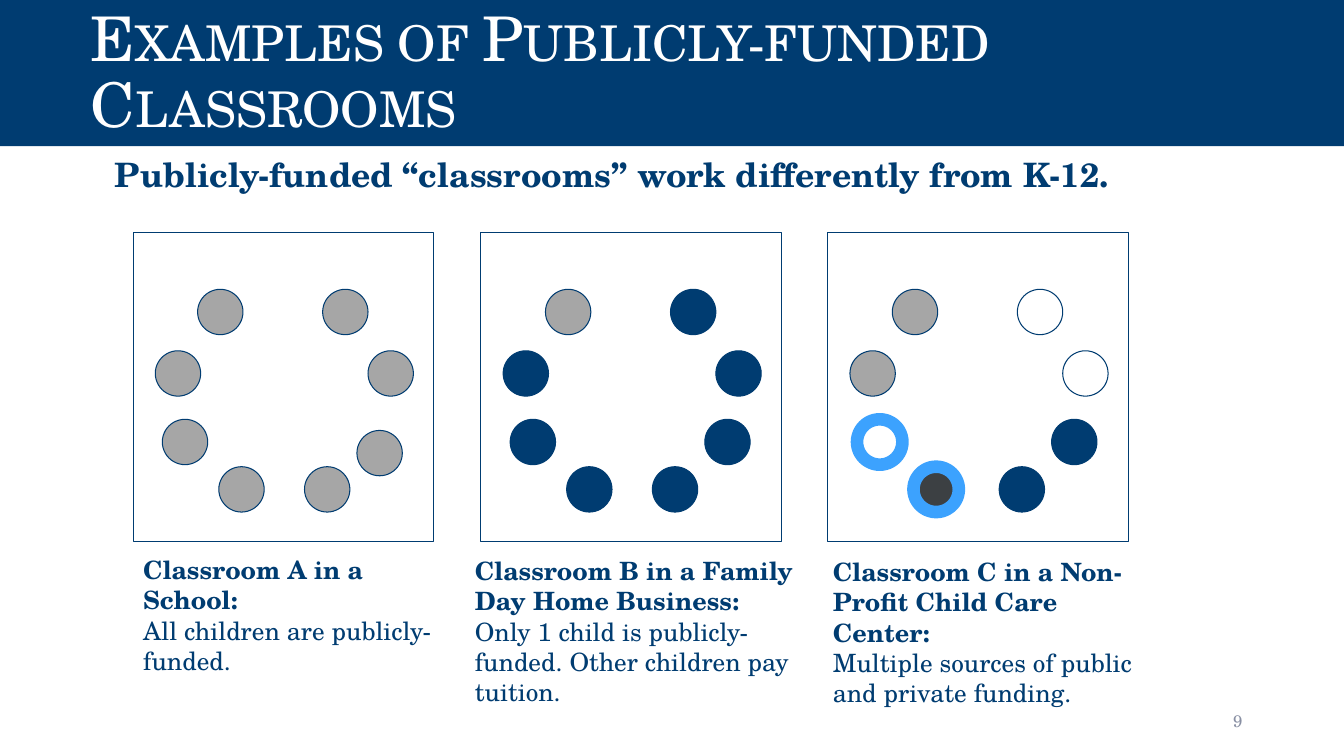
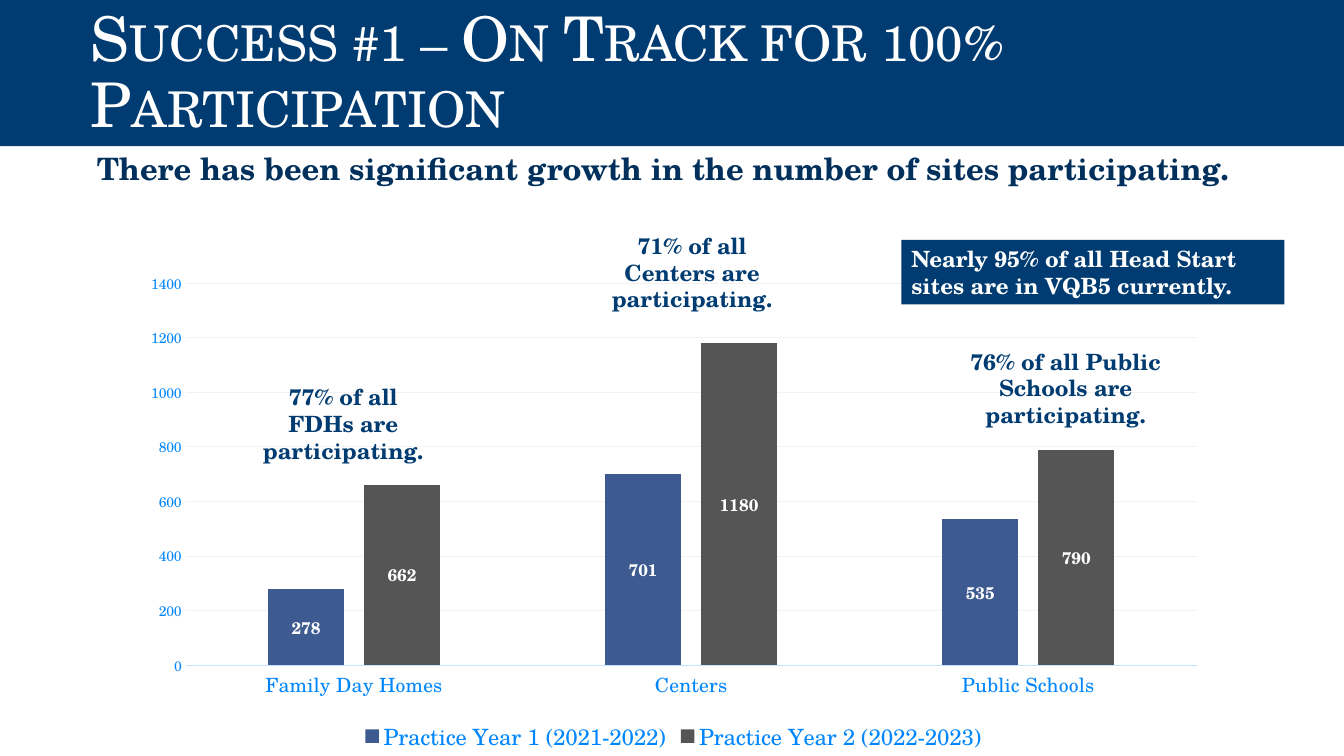
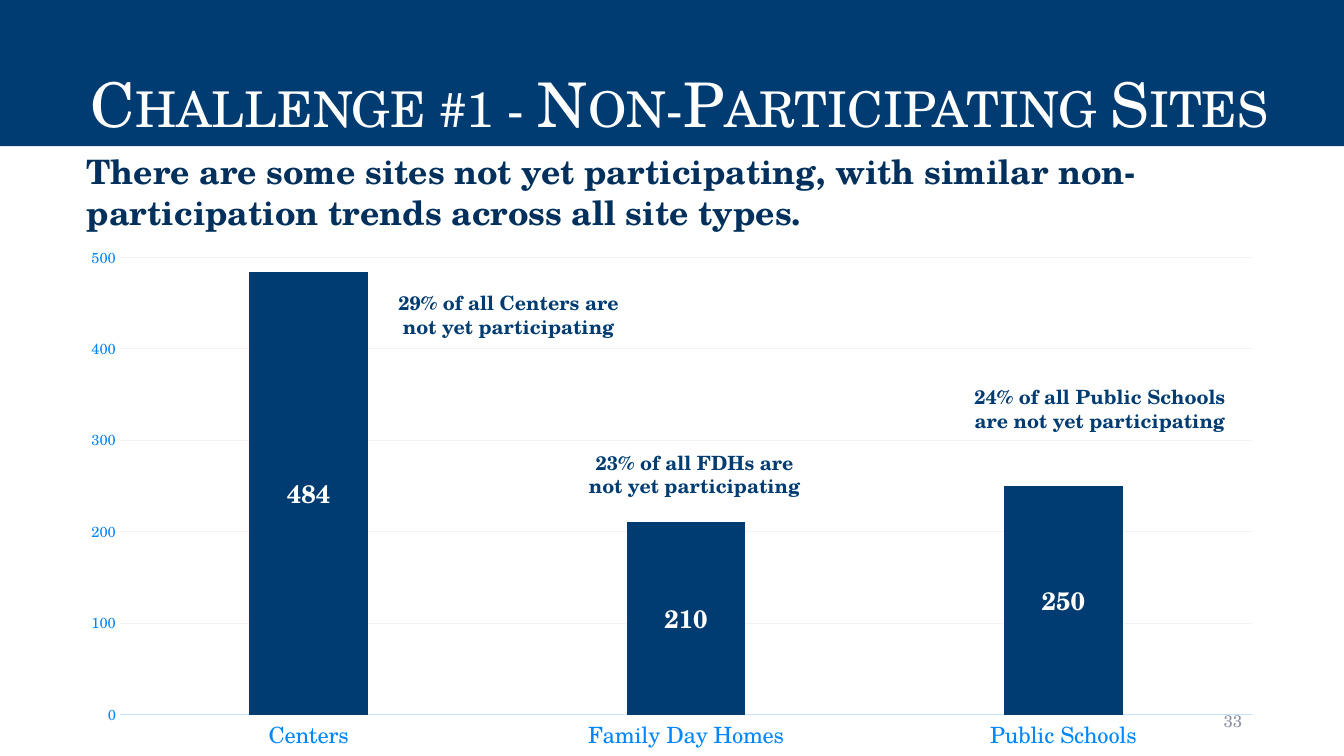
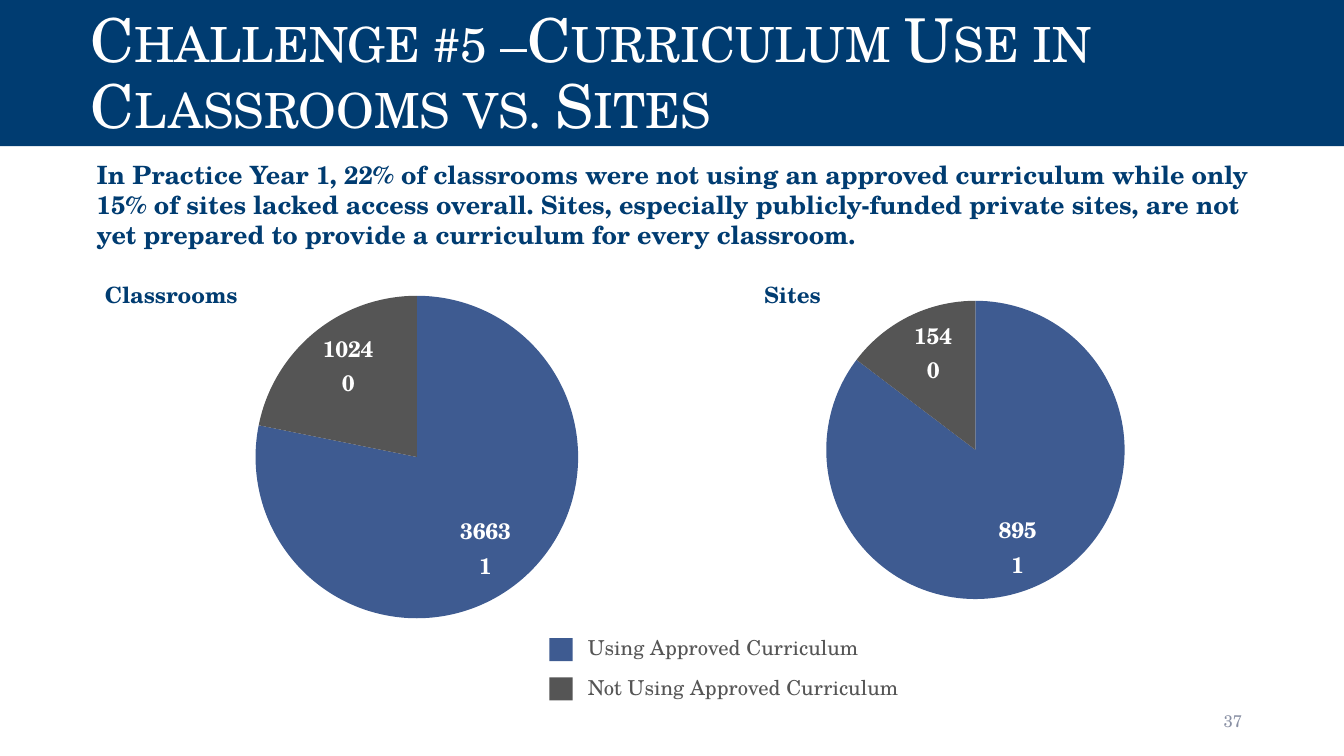
from dataclasses import dataclass

from lxml import etree
from pptx import Presentation
from pptx.chart.data import CategoryChartData
from pptx.dml.color import RGBColor
from pptx.enum.chart import XL_CHART_TYPE, XL_LABEL_POSITION, XL_LEGEND_POSITION, XL_TICK_MARK
from pptx.enum.shapes import MSO_SHAPE
from pptx.enum.text import MSO_ANCHOR, PP_ALIGN
from pptx.oxml.ns import qn
from pptx.util import Emu, Pt

RECTANGLE, OVAL = MSO_SHAPE.RECTANGLE, MSO_SHAPE.OVAL
LEFT, CENTER, RIGHT = PP_ALIGN.LEFT, PP_ALIGN.CENTER, PP_ALIGN.RIGHT
TOP, MIDDLE, BOTTOM = MSO_ANCHOR.TOP, MSO_ANCHOR.MIDDLE, MSO_ANCHOR.BOTTOM
COLUMN, PIE = XL_CHART_TYPE.COLUMN_CLUSTERED, XL_CHART_TYPE.PIE
LABEL_CENTER, LABEL_BEST_FIT = XL_LABEL_POSITION.CENTER, XL_LABEL_POSITION.BEST_FIT
LEGEND_BOTTOM = XL_LEGEND_POSITION.BOTTOM
NO_TICK = XL_TICK_MARK.NONE
EMU_PER_PX = 9144
SLIDE_WIDTH, SLIDE_HEIGHT = 1333, 750
INSETS = (10, 5, 10, 5)
WIDE_INSETS = (13, 13, 13, 13)


@dataclass(frozen=True)
class Theme:
    font: str = "TeX Gyre Schola"
    navy: str = "003C71"
    dark_navy: str = "00305B"
    white: str = "FFFFFF"
    number_gray: str = "888FA3"
    child_gray: str = "A6A6A6"
    charcoal: str = "3C4043"
    sky: str = "3CA2FE"
    series_blue: str = "3E5B91"
    series_gray: str = "555555"
    axis_text: str = "0086FC"
    axis_line: str = "C3E3FF"
    grid: str = "F2F2F2"
    title_size: float = 44
    headline_size: float = 24
    body_size: float = 18
    callout_size: float = 16
    legend_size: float = 14.7
    note_size: float = 14
    number_size: float = 12
    hairline: float = 0.75
    ring: float = 9


THEME = Theme()

PUBLIC = (THEME.child_gray, THEME.navy, THEME.hairline)
TUITION = (THEME.navy, THEME.navy, THEME.hairline)
OPEN = (THEME.white, THEME.navy, THEME.hairline)
OPEN_RING = (THEME.white, THEME.sky, THEME.ring)
DARK_RING = (THEME.charcoal, THEME.sky, THEME.ring)

SEAT_SIZE = 45
SEATS = [(64, 56), (188, 56), (233, 117), (222, 185), (170, 232), (85, 232), (29, 185), (22, 117)]
SHIFTED_SEATS = SEATS[:3] + [(222, 196)] + SEATS[4:]

CLASSROOMS = [
    (132, SHIFTED_SEATS, [PUBLIC] * 8, (129, 537, 323, 148),
     "Classroom A in a School:", "All children are publicly-funded."),
    (477, SEATS, [PUBLIC] + [TUITION] * 7, (458, 538, 342, 178),
     "Classroom B in a Family Day Home Business:",
     "Only 1 child is publicly-funded. Other children pay tuition."),
    (821, SEATS, [PUBLIC, OPEN, OPEN, TUITION, TUITION, DARK_RING, OPEN_RING, PUBLIC],
     (813, 539, 342, 178),
     "Classroom C in a Non-Profit Child Care Center:",
     "Multiple sources of public and private funding."),
]


def px(value):
    return Emu(round(value * EMU_PER_PX))


def color(value):
    return RGBColor.from_string(value)


def style_font(font, size, value, bold=False):
    font.name = THEME.font
    font.size = Pt(size)
    font.color.rgb = color(value)
    font.bold = bold


def set_line(line, value, width):
    line.color.rgb = color(value)
    line.width = Pt(width)


def fill_text(shape, paragraphs, size, value, align=LEFT, anchor=TOP, insets=INSETS, spacing=None):
    frame = shape.text_frame
    frame.word_wrap = True
    frame.vertical_anchor = anchor
    frame.margin_left, frame.margin_top, frame.margin_right, frame.margin_bottom = map(px, insets)
    for index, (text, bold) in enumerate(paragraphs):
        paragraph = frame.add_paragraph() if index else frame.paragraphs[0]
        paragraph.alignment = align
        paragraph.line_spacing = spacing
        run = paragraph.add_run()
        run.text = text
        style_font(run.font, size, value, bold)


def add_text(slide, box, paragraphs, size, value=THEME.navy, **options):
    shape = slide.shapes.add_textbox(*map(px, box))
    fill_text(shape, paragraphs, size, value, **options)


def add_block(slide, kind, box, fill, line=None, width=THEME.hairline):
    shape = slide.shapes.add_shape(kind, *map(px, box))
    shape.shadow.inherit = False
    shape.fill.solid()
    shape.fill.fore_color.rgb = color(fill)
    if line:
        set_line(shape.line, line, width)
    else:
        shape.line.fill.background()
    return shape


def add_title(slide, text, size=THEME.title_size):
    band = add_block(slide, RECTANGLE, (0, 0, SLIDE_WIDTH, 145), THEME.navy)
    fill_text(band, [(text, False)], size, THEME.white, anchor=BOTTOM,
              insets=(90, 5, 10, 5), spacing=0.9)
    for run in band.text_frame.paragraphs[0].runs:
        run.font._element.set("cap", "small")


def add_headline(slide, box, text, size=THEME.headline_size, value=THEME.navy, indent=20, spacing=None):
    add_text(slide, box, [(text, True)], size, value,
             insets=(10 + indent, 5, 10, 5), spacing=spacing)


def add_callout(slide, box, text, size=THEME.callout_size):
    add_text(slide, box, [(text, True)], size, align=CENTER)


def add_page_number(slide, number):
    add_text(slide, (942, 695, 300, 40), [(str(number), False)], THEME.number_size,
             THEME.number_gray, align=RIGHT, anchor=MIDDLE)


def add_classroom(slide, left, seats, children, caption_box, heading, detail):
    top = 231
    add_block(slide, RECTANGLE, (left, top, 298, 306), THEME.white, THEME.navy)
    for (x, y), child in zip(seats, children):
        add_block(slide, OVAL, (left + x, top + y, SEAT_SIZE, SEAT_SIZE), *child)
    add_text(slide, caption_box, [(heading, True), (detail, False)], THEME.body_size,
             insets=WIDE_INSETS)


def place_plot(chart, box, plot_box):
    left, top, width, height = box
    x, y, plot_width, plot_height = plot_box
    plot_area = chart._chartSpace.chart.plotArea
    for layout in plot_area.findall(qn("c:layout")):
        plot_area.remove(layout)
    layout = etree.Element(qn("c:layout"))
    plot_area.insert(0, layout)
    manual = etree.SubElement(layout, qn("c:manualLayout"))
    settings = [
        ("layoutTarget", "inner"), ("xMode", "edge"), ("yMode", "edge"),
        ("x", (x - left) / width), ("y", (y - top) / height),
        ("w", plot_width / width), ("h", plot_height / height),
    ]
    for name, value in settings:
        text = value if isinstance(value, str) else f"{value:.4f}"
        etree.SubElement(manual, qn(f"c:{name}")).set("val", text)


def add_chart(slide, kind, box, plot_box, categories, series):
    data = CategoryChartData(number_format="General")
    data.categories = categories
    for name, values in series:
        data.add_series(name, values)
    chart = slide.shapes.add_chart(kind, *map(px, box), data).chart
    chart.has_title = False
    chart.has_legend = False
    style_font(chart.font, 10, THEME.navy)
    place_plot(chart, box, plot_box)
    return chart


def add_labels(series, size, position):
    labels = series.data_labels
    labels.show_value = True
    labels.position = position
    style_font(labels.font, size, THEME.white, True)
    return labels


def add_column_chart(slide, box, plot_box, categories, series, colors, maximum, step,
                     category_size, value_size, label_size):
    chart = add_chart(slide, COLUMN, box, plot_box, categories, series)
    plot = chart.plots[0]
    plot.gap_width = 219
    plot.overlap = -27
    plot.vary_by_categories = False
    for column, value in zip(plot.series, colors):
        column.format.fill.solid()
        column.format.fill.fore_color.rgb = color(value)
        add_labels(column, label_size, LABEL_CENTER)
    category_axis, value_axis = chart.category_axis, chart.value_axis
    for axis, size in ((category_axis, category_size), (value_axis, value_size)):
        axis.major_tick_mark = axis.minor_tick_mark = NO_TICK
        style_font(axis.tick_labels.font, size, THEME.axis_text)
    set_line(category_axis.format.line, THEME.axis_line, THEME.hairline)
    value_axis.format.line.fill.background()
    value_axis.minimum_scale, value_axis.maximum_scale = 0, maximum
    value_axis.major_unit = step
    set_line(value_axis.major_gridlines.format.line, THEME.grid, THEME.hairline)
    return chart


def add_pie_chart(slide, box, diameter, values):
    left, top, width, height = box
    plot_box = (left + (width - diameter) / 2, top + (height - diameter) / 2, diameter, diameter)
    chart = add_chart(slide, PIE, box, plot_box, ["1", "2"], [("Series 1", values)])
    plot = chart.plots[0]
    plot.vary_by_categories = True
    series = plot.series[0]
    for index, value in enumerate((THEME.series_blue, THEME.series_gray)):
        point = series.points[index]
        point.format.fill.solid()
        point.format.fill.fore_color.rgb = color(value)
        point.format.line.fill.background()
    labels = add_labels(series, THEME.callout_size, LABEL_BEST_FIT)
    labels.show_percentage = True
    labels.number_format = "#,##0"
    labels.number_format_is_linked = False
    separator = etree.Element(qn("c:separator"))
    separator.text = "\n"
    labels._element.find(qn("c:showBubbleSize")).addnext(separator)


def build_classrooms(slide):
    add_title(slide, "Examples of Publicly-funded Classrooms")
    add_page_number(slide, 9)
    add_headline(slide, (92, 152, 1150, 60),
                 "Publicly-funded “classrooms” work differently from K-12.", indent=12, spacing=0.9)
    for classroom in CLASSROOMS:
        add_classroom(slide, *classroom)


def build_participation(slide):
    chart = add_column_chart(
        slide, (128, 262, 1080, 489), (184, 281, 1003, 379),
        ["Family Day Homes", "Centers", "Public Schools"],
        [("Practice Year 1 (2021-2022)", (278, 701, 535)),
         ("Practice Year 2 (2022-2023)", (662, 1180, 790))],
        [THEME.series_blue, THEME.series_gray], 1400, 200, 14, 10, 12)
    chart.has_legend = True
    chart.legend.position = LEGEND_BOTTOM
    chart.legend.include_in_layout = False
    style_font(chart.legend.font, 16, THEME.axis_text)
    add_title(slide, "Success #1 – On Track for 100% Participation")
    add_headline(slide, (66, 144, 1241, 114),
                 "There has been significant growth in the number of sites participating.",
                 size=22, value=THEME.dark_navy)
    banner = add_block(slide, RECTANGLE, (894, 238, 380, 64), THEME.navy)
    fill_text(banner, [("Nearly 95% of all Head Start sites are in VQB5 currently.", True)],
              THEME.callout_size, THEME.white)
    for box, text in (
        ((242, 375, 197, 91), "77% of all FDHs are participating."),
        ((588, 225, 197, 91), "71% of all Centers are participating."),
        ((920, 340, 274, 91), "76% of all Public Schools are participating."),
    ):
        add_callout(slide, box, text)


def build_non_participation(slide):
    add_title(slide, "Challenge #1 - Non-Participating Sites")
    add_column_chart(
        slide, (67, 199, 1200, 557), (119, 210, 1123, 499),
        ["Centers", "Family Day Homes", "Public Schools"],
        [("Series 1", (484, 210, 250))], [THEME.navy], 550, 100, 16, 10.5, 18)
    add_headline(slide, (56, 145, 1200, 106),
                 "There are some sites not yet participating, with similar "
                 "non-participation trends across all site types.", value=THEME.dark_navy)
    for box, text in (
        ((572, 442, 234, 57), "23% of all FDHs are not yet participating"),
        ((384, 284, 241, 57), "29% of all Centers are not yet participating"),
        ((948, 377, 286, 57), "24% of all Public Schools are not yet participating"),
    ):
        add_callout(slide, box, text, THEME.note_size)
    add_page_number(slide, 33)


def build_curriculum(slide):
    add_pie_chart(slide, (37, 228, 753, 451), 320, (3663, 1024))
    add_pie_chart(slide, (591, 221, 753, 451), 296, (895, 154))
    add_title(slide, "Challenge #5 –Curriculum Use in Classrooms vs. Sites", 43.2)
    add_headline(slide, (66, 153, 1204, 93),
                 "In Practice Year 1, 22% of classrooms were not using an approved curriculum "
                 "while only 15% of sites lacked access overall. Sites, especially "
                 "publicly-funded private sites, are not yet prepared to provide a curriculum "
                 "for every classroom.", size=THEME.body_size)
    for top, value, text in (
        (633, THEME.series_blue, "Using Approved Curriculum"),
        (672, THEME.series_gray, "Not Using Approved Curriculum"),
    ):
        add_block(slide, RECTANGLE, (545, top, 23, 23), value)
        add_text(slide, (570, top - 15, 366, 52), [(text, False)], THEME.legend_size,
                 THEME.series_gray, insets=WIDE_INSETS)
    for left, text in ((37, "Classrooms"), (653, "Sites")):
        add_callout(slide, (left, 274, 266, 37), text)
    add_page_number(slide, 37)


def main():
    presentation = Presentation()
    presentation.slide_width, presentation.slide_height = px(SLIDE_WIDTH), px(SLIDE_HEIGHT)
    blank = presentation.slide_layouts[6]
    for build in (build_classrooms, build_participation, build_non_participation, build_curriculum):
        build(presentation.slides.add_slide(blank))
    presentation.save("out.pptx")


if __name__ == "__main__":
    main()
